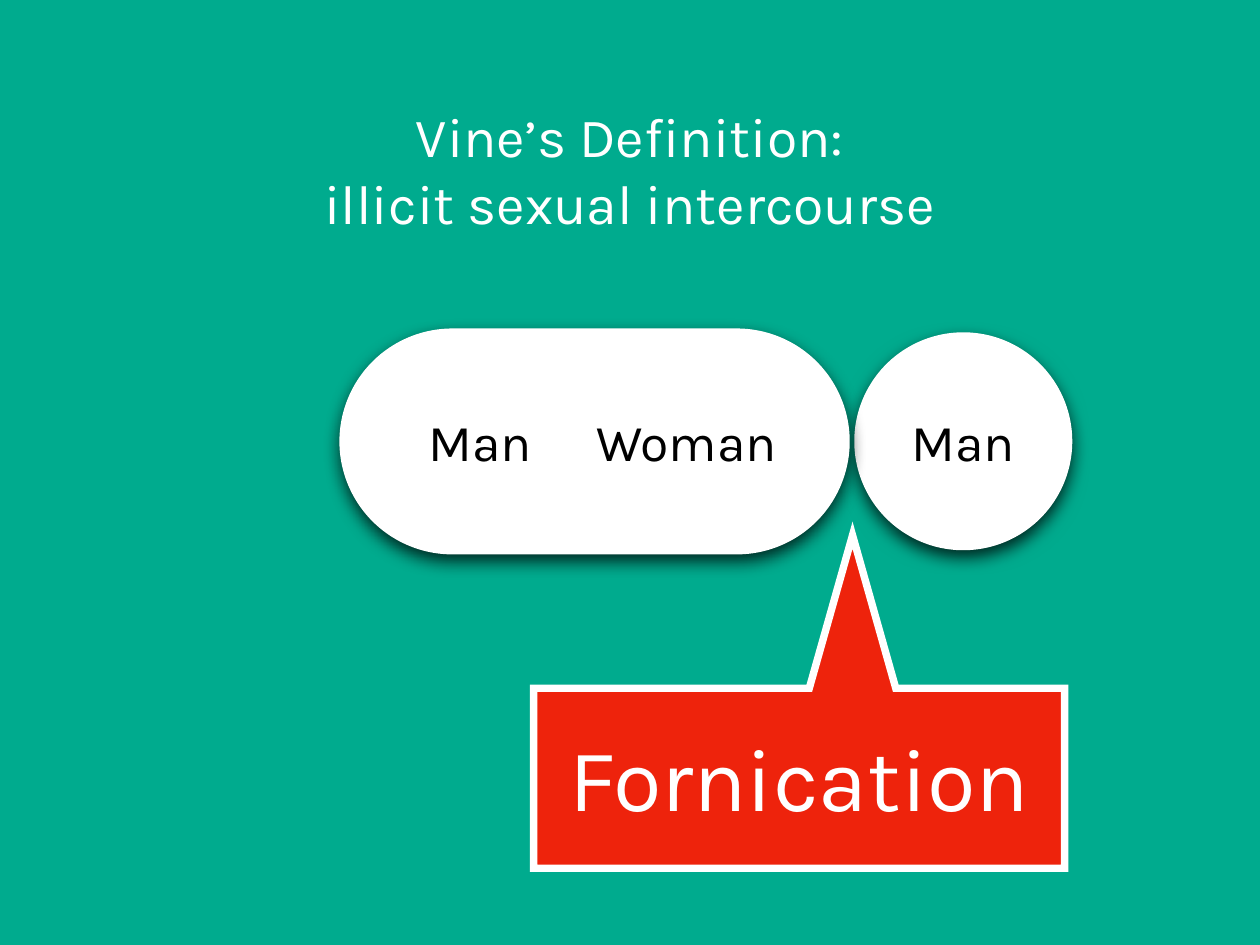
"""Build a slide with a definition, two linked groups and a callout."""
from lxml.etree import SubElement
from pptx import Presentation
from pptx.dml.color import RGBColor
from pptx.enum.shapes import MSO_SHAPE
from pptx.enum.text import MSO_ANCHOR, PP_ALIGN
from pptx.oxml import parse_xml
from pptx.oxml.ns import qn
from pptx.util import Cm, Pt

GREEN = RGBColor(0x00, 0xAB, 0x8E)
RED = RGBColor(0xEE, 0x23, 0x0C)
WHITE = RGBColor(0xFF, 0xFF, 0xFF)
BLACK = RGBColor(0x00, 0x00, 0x00)

SLIDE_SIZE = (36.12, 27.1)
FONT = "Karla"
PADDING = 0.15
GROUPS = [
    (MSO_SHAPE.OVAL, (24.49, 9.53, 6.25, 6.25)),
    (MSO_SHAPE.ROUNDED_RECTANGLE, (9.73, 9.42, 14.63, 6.48)),
]
CALLOUT = {"left": 15.3, "top": 19.74, "right": 30.52, "bottom": 24.9}
POINTER = {"x": 24.44, "y": 15.35, "half_width": 1.24}
LABELS = [
    ("Fornication", (15.93, 20.4, 13.97, 3.73), 72, WHITE),
    ("Man", (24.51, 11.51, 6.2, 2.29), 42, BLACK),
    ("Man", (8.97, 11.51, 9.6, 2.29), 42, BLACK),
    ("Woman", (14.88, 11.51, 9.6, 2.29), 42, BLACK),
    ("Vine’s Definition:\villicit sexual intercourse", (2.79, 2.54, 30.53, 4.6), 45, WHITE),
]
SHADOW = (
    '<a:effectLst xmlns:a="http://schemas.openxmlformats.org/drawingml/2006/main">'
    '<a:outerShdw blurRad="177800" dist="75000" dir="5400000" rotWithShape="0">'
    '<a:srgbClr val="000000"><a:alpha val="76000"/></a:srgbClr>'
    "</a:outerShdw></a:effectLst>"
)


def add_callout(slide):
    left, top, right, bottom = (CALLOUT[side] for side in ("left", "top", "right", "bottom"))
    tip = (POINTER["x"], POINTER["y"])
    base_left = POINTER["x"] - POINTER["half_width"]
    base_right = POINTER["x"] + POINTER["half_width"]
    corners = [(base_left, top), (left, top), (left, bottom),
               (right, bottom), (right, top), (base_right, top)]
    outline = slide.shapes.build_freeform(Cm(tip[0]), Cm(tip[1]))
    outline.add_line_segments([(Cm(x), Cm(y)) for x, y in corners], close=True)
    callout = outline.convert_to_shape()
    callout.shadow.inherit = False
    callout.fill.solid()
    callout.fill.fore_color.rgb = RED
    callout.line.color.rgb = WHITE
    callout.line.width = Pt(6)
    SubElement(callout.line._get_or_add_ln(), qn("a:miter"), lim="800000")


def add_group(slide, preset, box):
    group = slide.shapes.add_shape(preset, *map(Cm, box))
    if preset == MSO_SHAPE.ROUNDED_RECTANGLE:
        group.adjustments[0] = 0.5
    group.fill.solid()
    group.fill.fore_color.rgb = WHITE
    group.line.fill.background()
    group._element.spPr.append(parse_xml(SHADOW))


def add_label(slide, wording, box, size, color):
    frame = slide.shapes.add_textbox(*map(Cm, box)).text_frame
    frame.word_wrap = True
    frame.vertical_anchor = MSO_ANCHOR.MIDDLE
    frame.margin_left = frame.margin_right = Cm(PADDING)
    frame.margin_top = frame.margin_bottom = Cm(PADDING)
    frame.text = wording
    paragraph = frame.paragraphs[0]
    paragraph.alignment = PP_ALIGN.CENTER
    paragraph.font.name = FONT
    paragraph.font.size = Pt(size)
    paragraph.font.color.rgb = color


def main():
    presentation = Presentation()
    presentation.slide_width, presentation.slide_height = map(Cm, SLIDE_SIZE)
    slide = presentation.slides.add_slide(presentation.slide_layouts[6])
    slide.background.fill.solid()
    slide.background.fill.fore_color.rgb = GREEN
    add_callout(slide)
    for preset, box in GROUPS:
        add_group(slide, preset, box)
    for label in LABELS:
        add_label(slide, *label)
    presentation.save("out.pptx")


if __name__ == "__main__":
    main()
